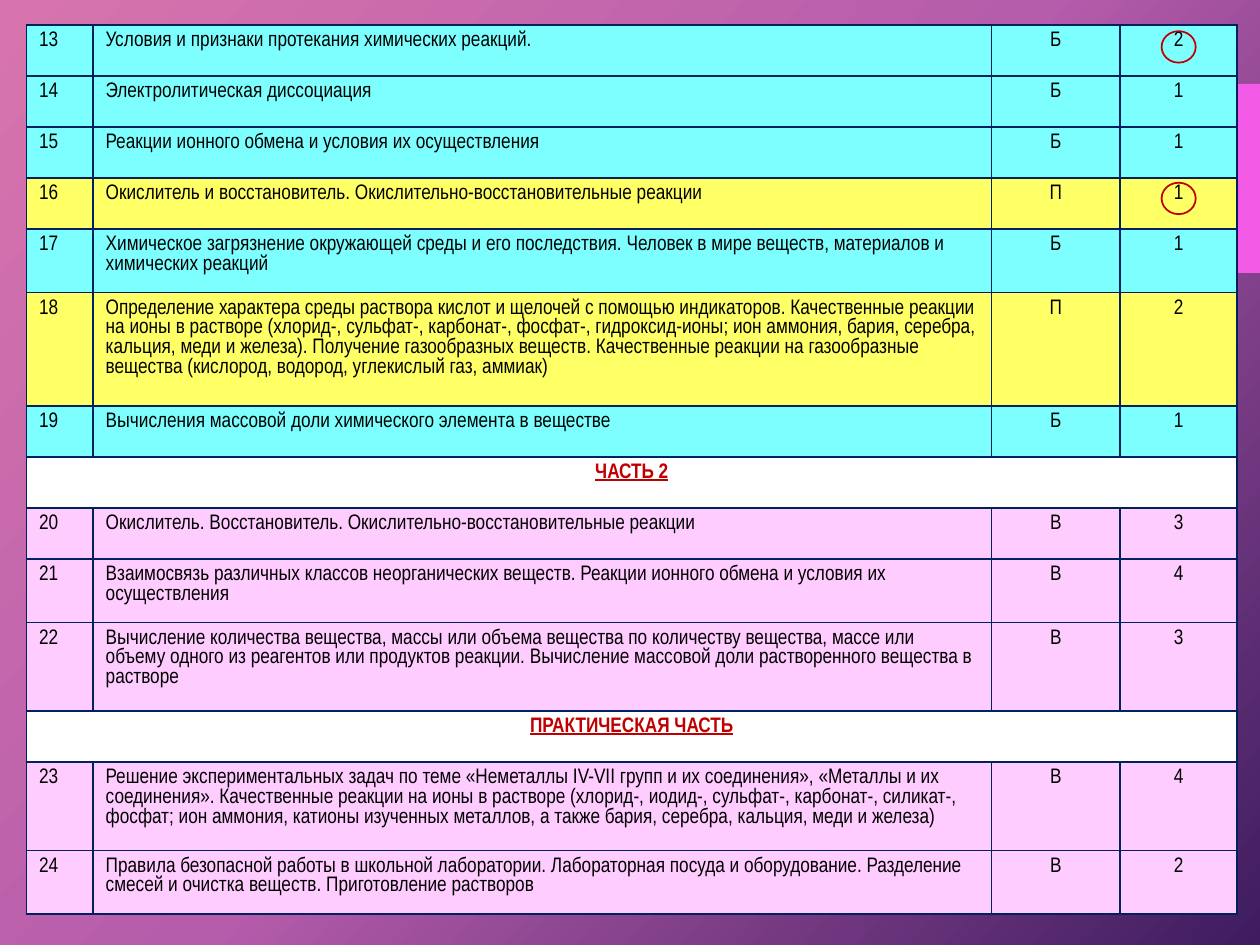
from copy import deepcopy

from lxml import etree
from pptx import Presentation
from pptx.dml.color import RGBColor
from pptx.enum.shapes import MSO_SHAPE
from pptx.enum.text import PP_ALIGN
from pptx.oxml.ns import qn
from pptx.util import Pt

RECTANGLE, OVAL = MSO_SHAPE.RECTANGLE, MSO_SHAPE.OVAL
LEFT, CENTER = PP_ALIGN.LEFT, PP_ALIGN.CENTER
NAVY = RGBColor(0x00, 0x20, 0x60)
RED = RGBColor(0xC0, 0x00, 0x00)
BLACK = RGBColor(0x00, 0x00, 0x00)
WHITE = RGBColor(0xFF, 0xFF, 0xFF)
MAGENTA = RGBColor(0xF3, 0x5A, 0xE6)
AQUA = RGBColor(0x7D, 0xFF, 0xFF)
YELLOW = RGBColor(0xFF, 0xFF, 0x66)
PINK = RGBColor(0xFF, 0xCC, 0xFF)
BACKDROP = [
    (0, RGBColor(0xD7, 0x74, 0xAD)),
    (0.5, RGBColor(0xB5, 0x5C, 0xAB)),
    (1, RGBColor(0x3E, 0x1C, 0x5F)),
]
LEVEL_FILLS = {"Б": AQUA, "П": YELLOW, "В": PINK}
BODY_FONT = {"name": "Arial Narrow", "size": Pt(12), "bold": False, "underline": False}
HEADING_FONT = {**BODY_FONT, "bold": True, "underline": True}
COLUMN_WIDTHS = [38.1, 513.4, 73.4, 67]
LINE_HEIGHTS = {1: 29.15, 2: 36.2, 3: 50.6, 4: 64.9}

PART_ONE = [
    (1, "Условия и признаки протекания химических реакций.", "Б", 2),
    (1, "Электролитическая диссоциация", "Б", 1),
    (1, "Реакции ионного обмена и условия их осуществления", "Б", 1),
    (1, "Окислитель и восстановитель. Окислительно-восстановительные реакции", "П", 1),
    (2, "Химическое загрязнение окружающей среды и его последствия. Человек в мире "
        "веществ, материалов и химических реакций", "Б", 1),
    (4, "Определение характера среды раствора кислот и щелочей с помощью индикаторов. "
        "Качественные реакции на ионы в растворе (хлорид-, сульфат-, карбонат-, фосфат-, "
        "гидроксид-ионы; ион аммония, бария, серебра, кальция, меди и железа). Получение "
        "газообразных веществ. Качественные реакции на газообразные вещества (кислород, "
        "водород, углекислый газ, аммиак)", "П", 2),
    (1, "Вычисления массовой доли химического элемента в веществе", "Б", 1),
]
PART_TWO = [
    (1, "Окислитель. Восстановитель. Окислительно-восстановительные реакции", "В", 3),
    (2, "Взаимосвязь различных классов неорганических веществ. Реакции ионного обмена и "
        "условия их осуществления", "В", 4),
    (3, "Вычисление количества вещества, массы или объема вещества по количеству "
        "вещества, массе или объему одного из реагентов или продуктов реакции. "
        "Вычисление массовой доли растворенного вещества в растворе", "В", 3),
]
PRACTICE = [
    (3, "Решение экспериментальных задач по теме «Неметаллы IV-VII групп и их "
        "соединения», «Металлы и их соединения». Качественные реакции на ионы в растворе "
        "(хлорид-, иодид-, сульфат-, карбонат-, силикат-, фосфат; ион аммония, катионы "
        "изученных металлов, а также бария, серебра, кальция, меди и железа)", "В", 4),
    (2, "Правила безопасной работы в школьной лаборатории. Лабораторная посуда и "
        "оборудование. Разделение смесей и очистка веществ. Приготовление растворов",
     "В", 2),
]
SECTIONS = [(None, PART_ONE), ("ЧАСТЬ 2", PART_TWO), ("ПРАКТИЧЕСКАЯ ЧАСТЬ", PRACTICE)]
FIRST_NUMBER = 13


def paint_background(page):
    """Fill the page with the three-stop diagonal gradient."""
    fill = page.background.fill
    fill.gradient()
    fill.gradient_angle = 318
    stop_list = next(page.element.iter(qn("a:gsLst")))
    stop_list.insert(1, deepcopy(stop_list[0]))
    for stop, (position, color) in zip(fill.gradient_stops, BACKDROP):
        stop.position = position
        stop.color.rgb = color


def add_figure(page, kind, box, fill=None, line=None):
    """Place a preset shape with an optional fill and outline."""
    figure = page.shapes.add_shape(kind, *map(Pt, box))
    figure.shadow.inherit = False
    if fill is None:
        figure.fill.background()
    else:
        figure.fill.solid()
        figure.fill.fore_color.rgb = fill
    if line is None:
        figure.line.fill.background()
    else:
        figure.line.color.rgb = line
        figure.line.width = Pt(1)


def add_borders(cell):
    """Draw a thin navy line on each side of a cell."""
    properties = cell._tc.get_or_add_tcPr()
    for side in ("lnL", "lnR", "lnT", "lnB"):
        line = etree.SubElement(properties, qn(f"a:{side}"), w=str(Pt(1)))
        solid = etree.SubElement(line, qn("a:solidFill"))
        etree.SubElement(solid, qn("a:srgbClr"), val=str(NAVY))


def write_cell(cell, text, fill, align=LEFT, font=BODY_FONT, color=BLACK):
    """Fill a cell and write its single paragraph."""
    cell.fill.solid()
    cell.fill.fore_color.rgb = fill
    para = cell.text_frame.paragraphs[0]
    para.alignment = align
    span = para.add_run()
    span.text = str(text)
    for name, value in font.items():
        setattr(span.font, name, value)
    span.font.color.rgb = color


def list_rows():
    """Return line count and cell texts of each row, headings having one text."""
    rows, number = [], FIRST_NUMBER
    for heading, topics in SECTIONS:
        if heading:
            rows.append((1, [heading]))
        for lines, *texts in topics:
            rows.append((lines, [number, *texts]))
            number += 1
    return rows


def add_topic_table(page, box):
    """Build the table of exam topics with level and score."""
    rows = list_rows()
    frame = page.shapes.add_table(len(rows), len(COLUMN_WIDTHS), *map(Pt, box))
    table = frame.table
    table.first_row = table.horz_banding = False
    for column, width in zip(table.columns, COLUMN_WIDTHS):
        column.width = Pt(width)
    for row, (lines, texts) in zip(table.rows, rows):
        row.height = Pt(LINE_HEIGHTS[lines])
        cells = list(row.cells)
        for cell in cells:
            add_borders(cell)
        if len(texts) == 1:
            cells[0].merge(cells[-1])
            write_cell(cells[0], texts[0], WHITE, CENTER, HEADING_FONT, RED)
            continue
        fill = LEVEL_FILLS[texts[2]]
        for cell, text, align in zip(cells, texts, (LEFT, LEFT, CENTER, CENTER)):
            write_cell(cell, text, fill, align)


def main():
    """Create the deck and save it."""
    deck = Presentation()
    deck.slide_width, deck.slide_height = Pt(720), Pt(540)
    page = deck.slides.add_slide(deck.slide_layouts[6])
    paint_background(page)
    add_figure(page, RECTANGLE, (607, 48, 113, 108), fill=MAGENTA)
    add_topic_table(page, (15.1, 14.4, 691.9, 507))
    for top in (104.4, 17.8):
        add_figure(page, OVAL, (663.8, top, 19.5, 18), line=RED)
    deck.save("out.pptx")


if __name__ == "__main__":
    main()
